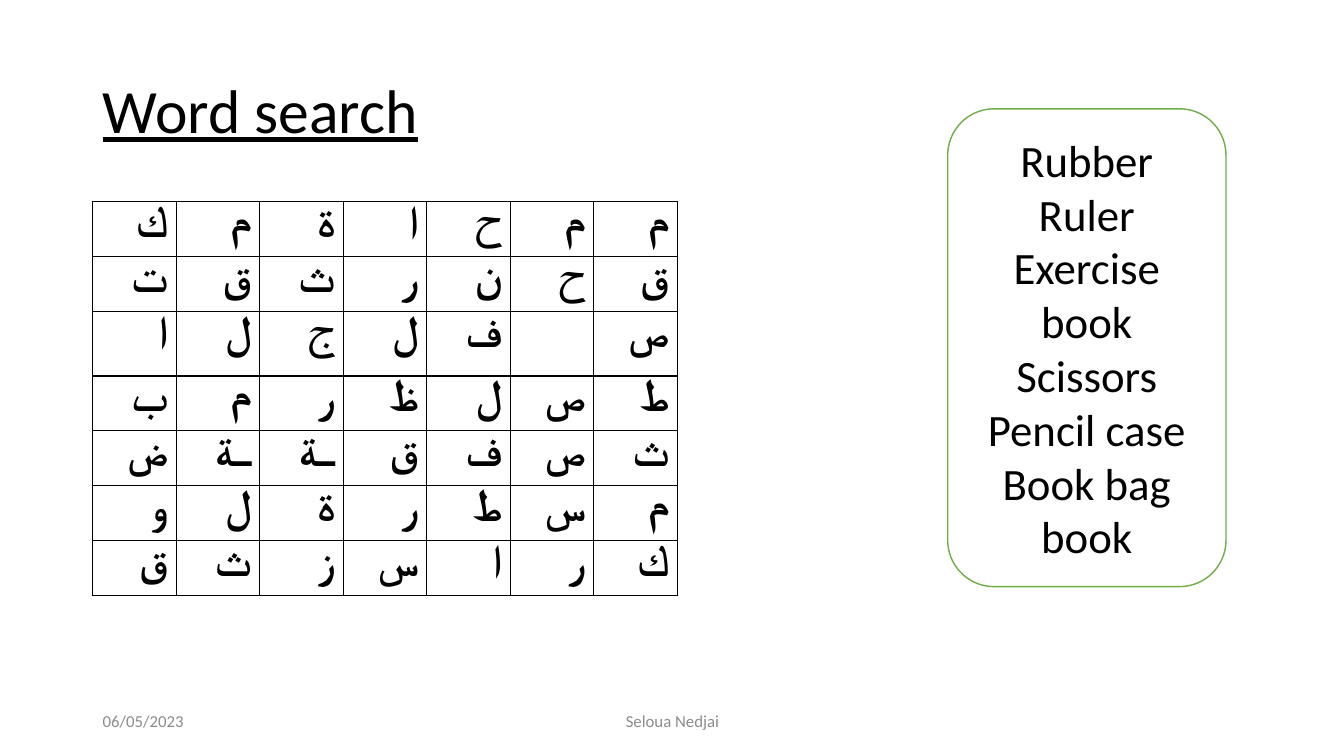
import pptx
import pptx.util
import pptx.dml.color
import pptx.enum.shapes
import pptx.enum.text
import lxml.etree

Inches, Pt = pptx.util.Inches, pptx.util.Pt
RGBColor = pptx.dml.color.RGBColor
PP_ALIGN = pptx.enum.text.PP_ALIGN
MIDDLE = pptx.enum.text.MSO_ANCHOR.MIDDLE

BLACK = RGBColor(0x00, 0x00, 0x00)
WHITE = RGBColor(0xFF, 0xFF, 0xFF)
GREY = RGBColor(0x8C, 0x8C, 0x8C)
GREEN = RGBColor(0x70, 0xAD, 0x47)
LEFT = 0.92

LETTERS = [
    ["ك", "م", "ة", "ا", "ح", "م", "م"],
    ["ت", "ق", "ث", "ر", "ن", "ح", "ق"],
    ["ا", "ل", "ج", "ل", "ف", "", "ص"],
    ["ب", "م", "ر", "ظ", "ل", "ص", "ط"],
    ["ض", "ـة", "ـة", "ق", "ف", "ص", "ث"],
    ["و", "ل", "ة", "ر", "ط", "س", "م"],
    ["ق", "ث", "ز", "س", "ا", "ر", "ك"],
]
WORDS = ["Rubber", "Ruler", "Exercise book", "Scissors",
         "Pencil case", "Book bag", "book"]


def style(p, size, color, align=PP_ALIGN.LEFT):
    p.alignment = align
    p.font.name = "Calibri"
    p.font.size = Pt(size)
    p.font.color.rgb = color


def add_borders(cell):
    tcPr = cell._tc.get_or_add_tcPr()
    for i, side in enumerate(("lnL", "lnR", "lnT", "lnB")):
        ln = lxml.etree.Element(pptx.oxml.ns.qn(f"a:{side}"), w=str(Pt(1)))
        fill = lxml.etree.SubElement(ln, pptx.oxml.ns.qn("a:solidFill"))
        lxml.etree.SubElement(fill, pptx.oxml.ns.qn("a:srgbClr"), val=str(BLACK))
        tcPr.insert(i, ln)


prs = pptx.Presentation()
prs.slide_width, prs.slide_height = Inches(13.33), Inches(7.5)
slide = prs.slides.add_slide(prs.slide_layouts[5])

# Title
title = slide.shapes.title
title.left, title.top = Inches(LEFT), Inches(0.4)
title.width, title.height = Inches(11.5), Inches(1.45)
tf = title.text_frame
tf.text = "Word search"
tf.vertical_anchor = MIDDLE
p = tf.paragraphs[0]
style(p, 44, BLACK)
p.font.underline = True
p.line_spacing = 0.9

# Letter grid
n_rows, n_cols = len(LETTERS), len(LETTERS[0])
table = slide.shapes.add_table(n_rows, n_cols, Inches(LEFT), Inches(2),
                               Inches(5.8), Inches(3.92)).table
table.first_row = table.horz_banding = False
for r, letters in enumerate(LETTERS):
    table.rows[r].height = Inches(0.545 if all(letters) else 0.64)
    for c, letter in enumerate(letters):
        cell = table.cell(r, c)
        cell.margin_top = cell.margin_bottom = 0
        cell.margin_left = cell.margin_right = Inches(0.08)
        cell.fill.background()
        add_borders(cell)
        cell.text = letter
        p = cell.text_frame.paragraphs[0]
        style(p, 32, BLACK, PP_ALIGN.RIGHT)
        p.font.bold = True
        p._p.get_or_add_pPr().set("rtl", "1")

# Date and author
for text, left, width, align in (
        ("06/05/2023", LEFT, 3, PP_ALIGN.LEFT),
        ("Seloua Nedjai", 4.42, 4.5, PP_ALIGN.CENTER)):
    sp = slide.shapes.add_textbox(Inches(left), Inches(6.95), Inches(width), Inches(0.4))
    tf = sp.text_frame
    tf.word_wrap = True
    tf.vertical_anchor = MIDDLE
    tf.text = text
    style(tf.paragraphs[0], 12, GREY, align)

# Words to find
sp = slide.shapes.add_shape(pptx.enum.shapes.MSO_SHAPE.ROUNDED_RECTANGLE,
                            Inches(9.4), Inches(1.08), Inches(2.76), Inches(4.74))
sp.shadow.inherit = False
sp.fill.solid()
sp.fill.fore_color.rgb = WHITE
sp.line.color.rgb = GREEN
sp.line.width = Pt(1)
tf = sp.text_frame
tf.word_wrap = True
tf.vertical_anchor = MIDDLE
tf.text = "\n".join(WORDS)
for p in tf.paragraphs:
    style(p, 32, BLACK, PP_ALIGN.CENTER)

prs.save("out.pptx")
